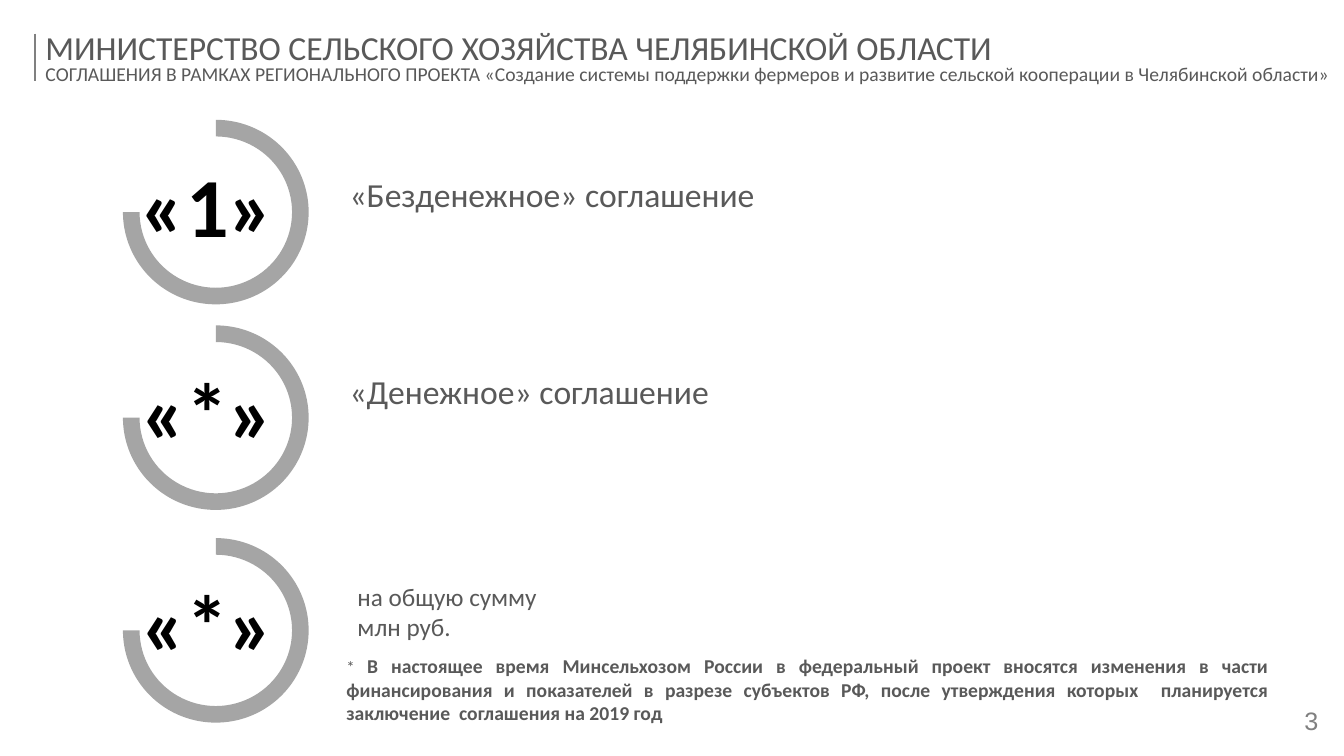
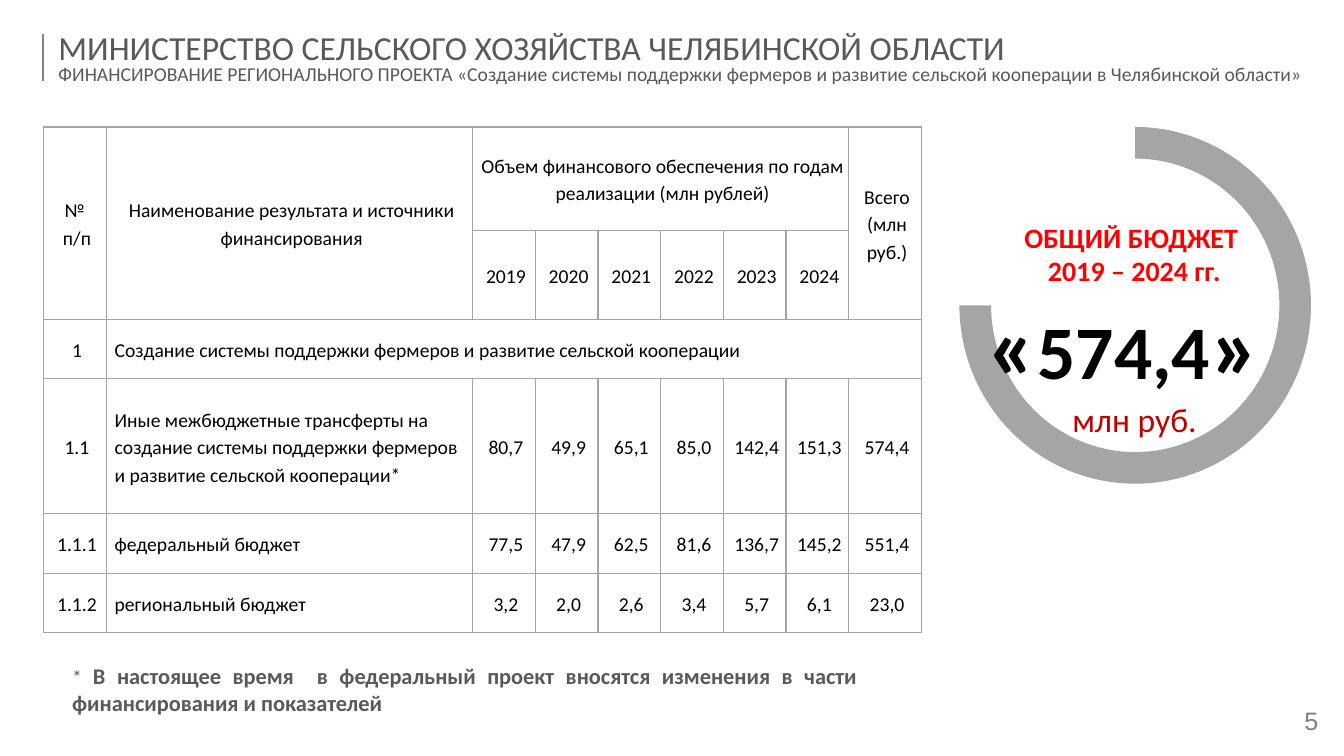
from lxml import etree
from pptx import Presentation
from pptx.dml.color import RGBColor
from pptx.enum.shapes import MSO_CONNECTOR, MSO_SHAPE
from pptx.enum.text import MSO_ANCHOR, MSO_AUTO_SIZE, PP_ALIGN
from pptx.oxml.ns import qn
from pptx.util import Cm, Pt

LEFT, CENTER, JUSTIFY = PP_ALIGN.LEFT, PP_ALIGN.CENTER, PP_ALIGN.JUSTIFY
TOP, MIDDLE = MSO_ANCHOR.TOP, MSO_ANCHOR.MIDDLE
NO_FIT = MSO_AUTO_SIZE.NONE
STRAIGHT, BLOCK_ARC = MSO_CONNECTOR.STRAIGHT, MSO_SHAPE.BLOCK_ARC

COLORS = {
    "text": "595959",
    "black": "000000",
    "rule": "808080",
    "ring": "A5A5A5",
    "red": "FF0000",
    "dark_red": "C00000",
}
FONT = "Calibri"
WIDTH, HEIGHT = 33.87, 19.05
MINISTRY = "МИНИСТЕРСТВО СЕЛЬСКОГО ХОЗЯЙСТВА ЧЕЛЯБИНСКОЙ ОБЛАСТИ"
PROJECT = ("«Создание системы поддержки фермеров и развитие сельской "
           "кооперации в Челябинской области»")

AGREEMENTS = [
    (3.02, "«1» "),
    (8.2, "«*» "),
    (13.56, "«*» "),
]
YEARS = ["2019", "2020", "2021", "2022", "2023", "2024"]
COLUMN_WIDTHS = [1.6, 9.22] + [1.58] * len(YEARS) + [1.83]
ROW_HEIGHTS = [2.6, 2.24, 1.5, 3.4, 1.5, 1.5]
BUDGET_ROWS = [
    ["№ \nп/п", "Наименование результата и источники финансирования",
     "Объем финансового обеспечения по годам реализации (млн рублей)",
     "", "", "", "", "", "Всего\n(млн руб.)"],
    ["", ""] + YEARS + [""],
    ["1", "Создание системы поддержки фермеров и развитие сельской кооперации"]
    + [""] * 7,
    ["1.1", "Иные межбюджетные трансферты на создание системы поддержки "
     "фермеров и развитие сельской кооперации*",
     "80,7", "49,9", "65,1", "85,0", "142,4", "151,3", "574,4"],
    ["1.1.1", "федеральный бюджет",
     "77,5", "47,9", "62,5", "81,6", "136,7", "145,2", "551,4"],
    ["1.1.2", "региональный бюджет",
     "3,2", "2,0", "2,6", "3,4", "5,7", "6,1", "23,0"],
]
MERGES = [(0, 0, 1, 0), (0, 1, 1, 1), (0, 2, 0, 7), (0, 8, 1, 8), (2, 1, 2, 8)]


def rgb(name):
    return RGBColor.from_string(COLORS[name])


def format_run(r, size, color="text", bold=False, font=FONT):
    r.font.name = font
    r.font.size = Pt(size)
    r.font.bold = bold
    r.font.color.rgb = rgb(color)


def format_paragraph(p, align, size, color="text", bold=False, font=FONT):
    p.alignment = align
    for r in p.runs:
        format_run(r, size, color, bold, font)


def add_text(s, box, text, size, align=JUSTIFY, color="text", bold=False,
             font=FONT, anchor=TOP):
    tf = s.shapes.add_textbox(*map(Cm, box)).text_frame
    tf.word_wrap = True
    tf.vertical_anchor = anchor
    tf.text = text
    for p in tf.paragraphs:
        format_paragraph(p, align, size, color, bold, font)
    return tf


def add_ring(s, left, top, width, height):
    sp = s.shapes.add_shape(BLOCK_ARC, Cm(left), Cm(top), Cm(width), Cm(height))
    sp.adjustments[0] = 162
    sp.adjustments[1] = 108
    sp.adjustments[2] = 0.09
    sp.shadow.inherit = False
    sp.fill.solid()
    sp.fill.fore_color.rgb = rgb("ring")
    sp.line.fill.background()


def add_footnote(s, box, text, size):
    p = add_text(s, box, "* ", size - 2).paragraphs[0]
    r = p.add_run()
    r.text = text
    format_run(r, size, bold=True)


def add_base(prs, subject, number, rule_x, title_x):
    s = prs.slides.add_slide(prs.slide_layouts[5])
    title = s.shapes.title
    title.left, title.top = Cm(title_x), Cm(0.66)
    title.width, title.height = Cm(WIDTH - title_x), Cm(1.7)
    tf = title.text_frame
    tf.auto_size = NO_FIT
    tf.word_wrap = True
    tf.vertical_anchor = MIDDLE
    tf.margin_right = 0
    tf.text = f"{MINISTRY}\n{subject} {PROJECT}"
    for p, size in zip(tf.paragraphs, (24, 14)):
        p.line_spacing = 0.8
        p.space_before = Pt(0)
        format_paragraph(p, LEFT, size)

    rule = s.shapes.add_connector(
        STRAIGHT, Cm(rule_x), Cm(0.85), Cm(rule_x), Cm(2.05))
    rule.line.color.rgb = rgb("rule")
    rule.line.width = Pt(1.5)
    etree.SubElement(rule._element.spPr, qn("a:effectLst"))

    add_text(s, (32.25, 17.53, 1.6, 1.27), number, 18, CENTER, "rule",
             font="Arial", anchor=MIDDLE)
    return s


def add_agreement_mark(s, left, top, mark):
    add_text(s, (left - 0.76, top + 0.71, 6.25, 2.82), mark, 60, CENTER,
             "black", True, anchor=MIDDLE)
    add_ring(s, left, top, 4.68, 4.65)


def add_border(cell):
    tc_pr = cell._tc.get_or_add_tcPr()
    for side in ("a:lnL", "a:lnR", "a:lnT", "a:lnB"):
        ln = etree.SubElement(tc_pr, qn(side), w=str(Pt(1)))
        fill = etree.SubElement(ln, qn("a:solidFill"))
        etree.SubElement(fill, qn("a:srgbClr"), val=COLORS["ring"])


def format_cell(cell, align):
    add_border(cell)
    cell.fill.background()
    cell.vertical_anchor = MIDDLE
    cell.margin_left = Cm(0.2)
    cell.margin_right = cell.margin_top = cell.margin_bottom = Cm(0.1)
    for p in cell.text_frame.paragraphs:
        p.line_spacing = 1.15
        format_paragraph(p, align, 14, "black")


def add_budget_table(s, left, top):
    table = s.shapes.add_table(
        len(ROW_HEIGHTS), len(COLUMN_WIDTHS), Cm(left), Cm(top),
        Cm(sum(COLUMN_WIDTHS)), Cm(sum(ROW_HEIGHTS))).table
    table.first_row = False
    table.horz_banding = False
    for column, width in zip(table.columns, COLUMN_WIDTHS):
        column.width = Cm(width)
    for row, height in zip(table.rows, ROW_HEIGHTS):
        row.height = Cm(height)
    for i, values in enumerate(BUDGET_ROWS):
        for j, value in enumerate(values):
            cell = table.cell(i, j)
            cell.text_frame.text = value
            format_cell(cell, LEFT if j == 1 and i > 1 else CENTER)
    for row, col, last_row, last_col in MERGES:
        table.cell(row, col).merge(table.cell(last_row, last_col))


def add_total_budget(s, left, top):
    add_ring(s, left, top, 8.86, 8.99)
    tf = add_text(s, (left + 0.41, top + 2.21, 8, 5.79),
                  "ОБЩИЙ БЮДЖЕТ \n2019 – 2024 гг.", 20, CENTER, "red", True,
                  anchor=MIDDLE)
    total = tf.add_paragraph()
    total.alignment = CENTER
    for text, size in (("«", 66), ("574,4", 54), ("» ", 66)):
        r = total.add_run()
        r.text = text
        format_run(r, size, "black", True)
    unit = tf.add_paragraph()
    unit.text = "млн руб."
    format_paragraph(unit, CENTER, 24, "dark_red")


def build_agreements(prs):
    s = add_base(prs, "СОГЛАШЕНИЯ В РАМКАХ РЕГИОНАЛЬНОГО ПРОЕКТА", "3",
                 0.89, 0.89)
    for top, mark in AGREEMENTS:
        add_agreement_mark(s, 3.1, top, mark)
    add_text(s, (8.56, 4.27, 14.38, 1.27), "«Безденежное» соглашение", 24)
    add_text(s, (8.56, 9.22, 14.38, 1.27), "«Денежное» соглашение", 24)
    add_text(s, (8.76, 14.53, 6.65, 1.8), "на общую сумму\nмлн руб.", 18)
    add_footnote(
        s, (8.48, 16.36, 23.75, 2.06),
        "В настоящее время Минсельхозом России в федеральный проект вносятся "
        "изменения в части финансирования и показателей в разрезе субъектов "
        "РФ, после утверждения которых  планируется заключение  соглашения "
        "на 2019 год", 14)


def build_financing(prs):
    s = add_base(prs, "ФИНАНСИРОВАНИЕ РЕГИОНАЛЬНОГО ПРОЕКТА", "5", 1.09, 1.22)
    add_budget_table(s, 1.09, 3.2)
    add_total_budget(s, 24.18, 3.2)
    add_footnote(
        s, (1.57, 16.56, 20.29, 1.63),
        "В настоящее время  в федеральный проект вносятся изменения в части "
        "финансирования и показателей", 16)


def main():
    prs = Presentation()
    prs.slide_width, prs.slide_height = Cm(WIDTH), Cm(HEIGHT)
    build_agreements(prs)
    build_financing(prs)
    prs.save("out.pptx")


if __name__ == "__main__":
    main()
